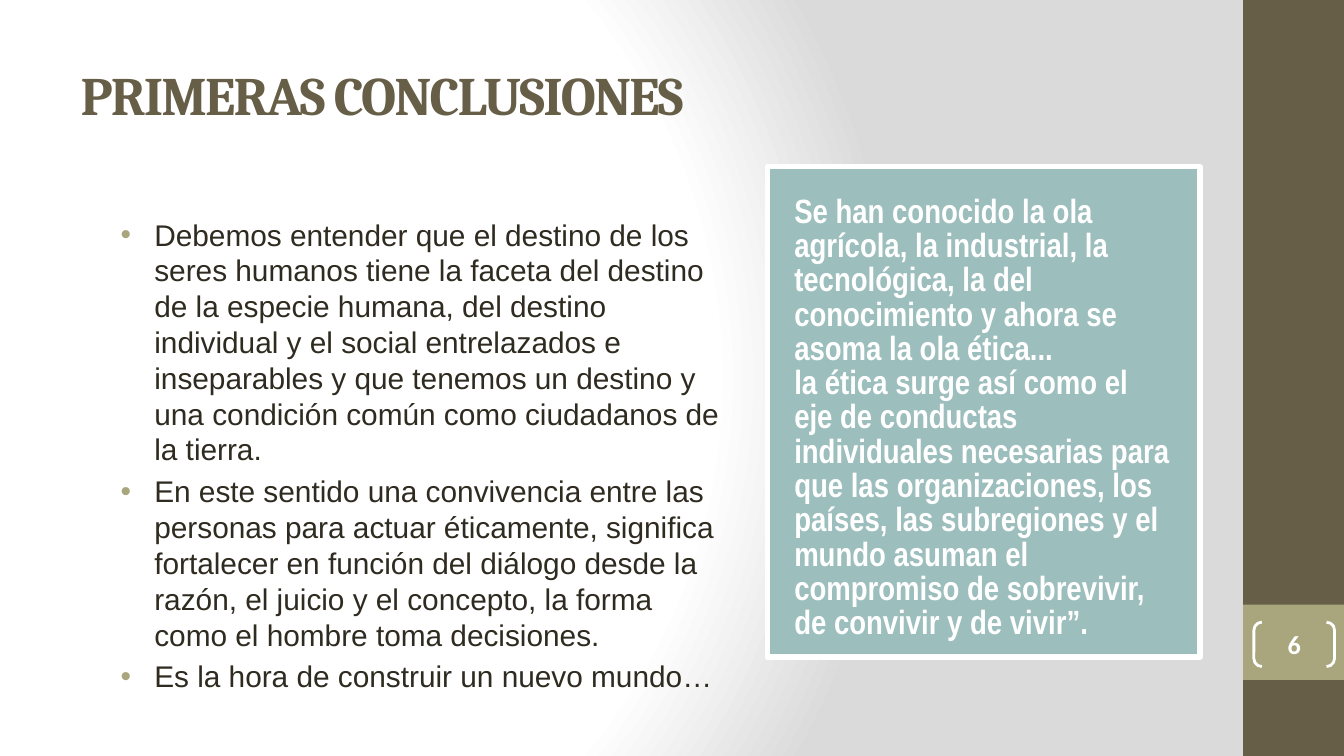
from lxml import etree
from pptx import Presentation
from pptx.dml.color import RGBColor
from pptx.enum.shapes import MSO_SHAPE
from pptx.enum.text import MSO_ANCHOR, MSO_AUTO_SIZE, PP_ALIGN
from pptx.oxml import parse_xml
from pptx.oxml.ns import qn
from pptx.util import Inches, Pt

RECTANGLE, BRACKETS = MSO_SHAPE.RECTANGLE, MSO_SHAPE.DOUBLE_BRACKET
TOP, MIDDLE = MSO_ANCHOR.TOP, MSO_ANCHOR.MIDDLE
LEFT, CENTER = PP_ALIGN.LEFT, PP_ALIGN.CENTER
FIXED, GROW = MSO_AUTO_SIZE.NONE, MSO_AUTO_SIZE.SHAPE_TO_FIT_TEXT

TITLE = "PRIMERAS CONCLUSIONES"
CONCLUSIONS = [
    "Debemos entender que el destino de los seres humanos tiene la faceta del destino de la "
    "especie humana, del destino individual y el social entrelazados e inseparables y que "
    "tenemos un destino y una condición común como ciudadanos de la tierra.",
    "En este sentido una convivencia entre las personas para actuar éticamente, significa "
    "fortalecer en función del diálogo desde la razón, el juicio y el concepto, la forma "
    "como el hombre toma decisiones.",
    "Es la hora de construir un nuevo mundo…",
]
QUOTE = [
    "Se han conocido la ola agrícola, la industrial, la tecnológica, la del conocimiento y "
    "ahora se asoma la ola ética...",
    "la ética surge así como el eje de conductas individuales necesarias para que las "
    "organizaciones, los países, las subregiones y el mundo asuman el compromiso de "
    "sobrevivir, de convivir y de vivir”.",
]
PAGE_NUMBER = "6"

THEME = {
    "brown": "675E47", "olive": "A9A57C", "teal": "9CBEBD",
    "ink": "2F2B20", "white": "FFFFFF", "grey": "DADADA",
    "title": {"font": "Cambria", "size": 29, "bold": True},
    "body": {"font": "Arial", "size": 16, "bold": False},
    "quote": {"font": "Arial Narrow", "size": 18, "bold": True},
    "number": {"font": "Calibri", "size": 14, "bold": True},
}
WIDTH, HEIGHT = 10, 10 * 9 / 16
RAIL_WIDTH = 0.75
RAIL_LEFT = WIDTH - RAIL_WIDTH
BACKGROUND_STOPS = [(0, "white"), (75, "white"), (100, "grey")]


def set_background(slide):
    stops = "".join(
        f'<a:gs pos="{position * 1000}"><a:srgbClr val="{THEME[color]}"/></a:gs>'
        for position, color in BACKGROUND_STOPS)
    slide.element.cSld.insert(0, parse_xml(
        '<p:bg xmlns:p="http://schemas.openxmlformats.org/presentationml/2006/main" '
        'xmlns:a="http://schemas.openxmlformats.org/drawingml/2006/main">'
        f'<p:bgPr><a:gradFill rotWithShape="1"><a:gsLst>{stops}</a:gsLst><a:path path="circle">'
        '<a:fillToRect l="20000" t="50000" r="100000" b="50000"/></a:path></a:gradFill>'
        '<a:effectLst/></p:bgPr></p:bg>'))


def add_panel(slide, kind, box, fill=None, line_width=None):
    panel = slide.shapes.add_shape(kind, *map(Inches, box))
    panel.shadow.inherit = False
    if fill:
        panel.fill.solid()
        panel.fill.fore_color.rgb = RGBColor.from_string(THEME[fill])
    else:
        panel.fill.background()
    if line_width:
        panel.line.color.rgb = RGBColor.from_string(THEME["white"])
        panel.line.width = Pt(line_width)
    else:
        panel.line.fill.background()
    return panel


def add_bullet(paragraph):
    properties = paragraph._p.get_or_add_pPr()
    properties.set("marL", str(Inches(0.38)))
    properties.set("indent", str(Inches(-0.25)))
    color = etree.SubElement(properties, qn("a:buClr"))
    etree.SubElement(color, qn("a:srgbClr"), val=THEME["olive"])
    etree.SubElement(properties, qn("a:buFont"), typeface="Arial")
    etree.SubElement(properties, qn("a:buChar"), char="•")


def write(shape, paragraphs, style, color, anchor=TOP, align=LEFT, insets=(0.1, 0.05, 0.1, 0.05),
          before=0, line_spacing=None, tracking=None, bullets=False, fit=FIXED):
    frame = shape.text_frame
    frame.word_wrap = True
    frame.auto_size = fit
    frame.vertical_anchor = anchor
    (frame.margin_left, frame.margin_top,
     frame.margin_right, frame.margin_bottom) = map(Inches, insets)
    for index, text in enumerate(paragraphs):
        paragraph = frame.add_paragraph() if index else frame.paragraphs[0]
        paragraph.alignment = align
        paragraph.space_before = Pt(before)
        if line_spacing:
            paragraph.line_spacing = line_spacing
        if bullets:
            add_bullet(paragraph)
        run = paragraph.add_run()
        run.text = text
        run.font.name = THEME[style]["font"]
        run.font.size = Pt(THEME[style]["size"])
        run.font.bold = THEME[style]["bold"]
        run.font.color.rgb = RGBColor.from_string(THEME[color])
        if tracking:
            run._r.get_or_add_rPr().set("spc", str(tracking * 100))


def main():
    deck = Presentation()
    deck.slide_width, deck.slide_height = Inches(WIDTH), Inches(HEIGHT)
    slide = deck.slides.add_slide(deck.slide_layouts[5])
    set_background(slide)

    add_panel(slide, RECTANGLE, (RAIL_LEFT, 0, RAIL_WIDTH, HEIGHT), fill="brown")
    add_panel(slide, RECTANGLE, (RAIL_LEFT, 4.5, RAIL_WIDTH, 0.56), fill="olive")

    title = slide.shapes.title
    title.left, title.top, title.width, title.height = map(Inches, (0.5, 0.23, 8.33, 0.94))
    write(title, [TITLE], "title", "brown", anchor=MIDDLE, tracking=-1)

    conclusions = slide.shapes.add_textbox(*map(Inches, (0.67, 1.56, 4.88, 3.67)))
    write(conclusions, CONCLUSIONS, "body", "ink", before=3.2, bullets=True)

    page_number = add_panel(slide, BRACKETS, (9.33, 4.63, 0.6, 0.33), line_width=1.5)
    page_number.adjustments[0] = 0.18
    write(page_number, [PAGE_NUMBER], "number", "white", anchor=MIDDLE, align=CENTER,
          insets=(0, 0, 0, 0))

    quote = add_panel(slide, RECTANGLE, (5.71, 1.24, 3.22, 3.65), fill="teal", line_width=3)
    write(quote, QUOTE, "quote", "white", anchor=MIDDLE, insets=(0.2, 0.2, 0.2, 0.1),
          line_spacing=0.85, fit=GROW)

    deck.save("out.pptx")


if __name__ == "__main__":
    main()
